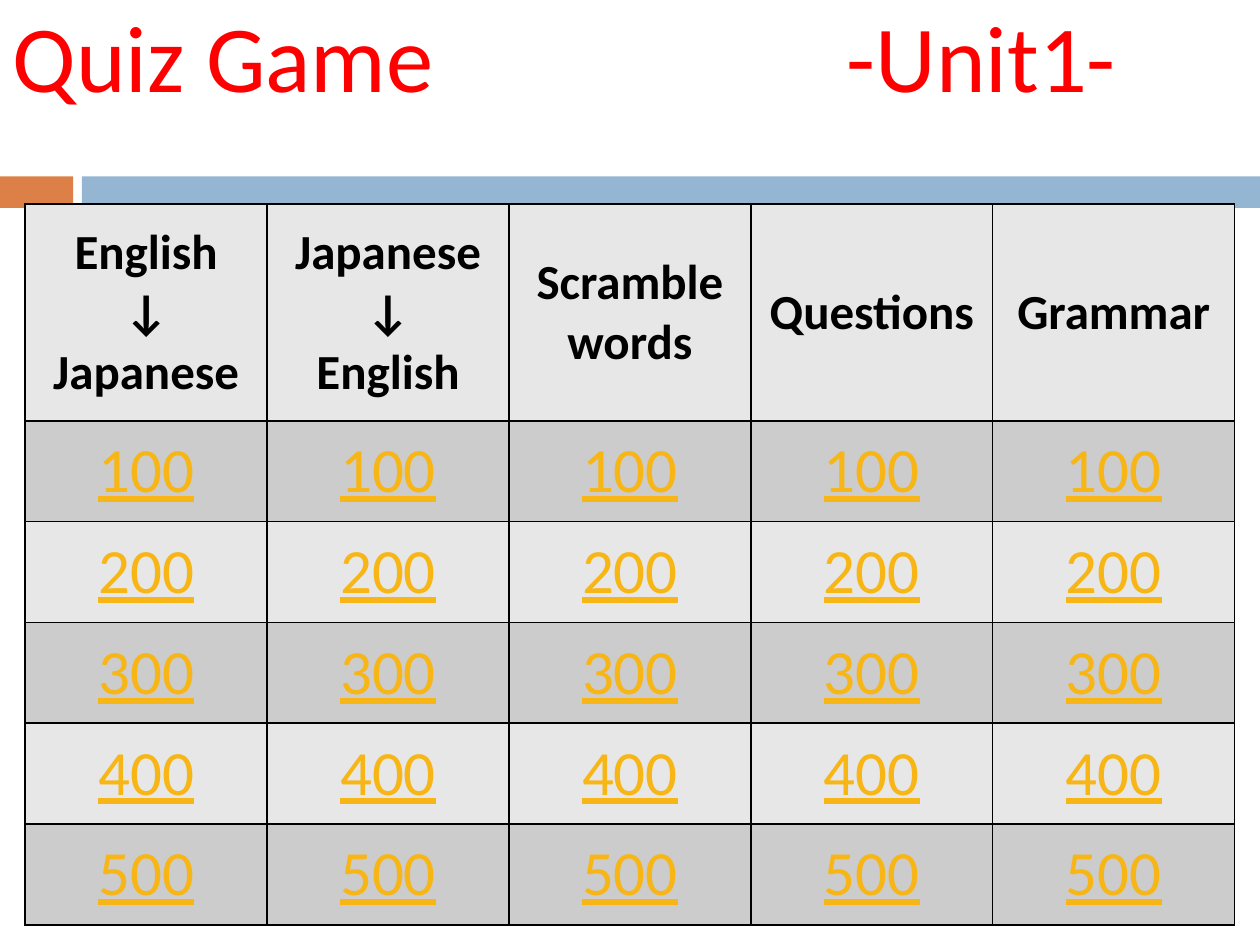
from lxml import etree
from pptx import Presentation
from pptx.dml.color import RGBColor
from pptx.enum.shapes import MSO_SHAPE
from pptx.enum.text import MSO_ANCHOR, MSO_AUTO_SIZE, PP_ALIGN
from pptx.oxml.ns import qn
from pptx.util import Inches, Pt

RECTANGLE = MSO_SHAPE.RECTANGLE
MIDDLE = MSO_ANCHOR.MIDDLE
LEFT, CENTER = PP_ALIGN.LEFT, PP_ALIGN.CENTER
NO_AUTOFIT = MSO_AUTO_SIZE.NONE

BLACK = RGBColor(0x00, 0x00, 0x00)
RED = RGBColor(0xFF, 0x00, 0x00)
GOLD = RGBColor(0xF7, 0xB6, 0x15)
ORANGE = RGBColor(0xDD, 0x80, 0x47)
BLUE = RGBColor(0x94, 0xB6, 0xD2)
LIGHT_GRAY = RGBColor(0xE7, 0xE7, 0xE7)
MID_GRAY = RGBColor(0xCC, 0xCC, 0xCC)

CATEGORIES = ["English\n↓\nJapanese", "Japanese\n↓\nEnglish",
              "Scramble words", "Questions", "Grammar"]
POINTS = [100, 200, 300, 400, 500]
HEADER_HEIGHT, POINTS_HEIGHT = 1.72, 0.8


class QuizSlide:
    """Holds the style and the slide being built."""

    font_name = "Calibri"
    border_width = Pt(1)

    def __init__(self, deck):
        self.slide = deck.slides.add_slide(deck.slide_layouts[5])

    def format_text(self, frame, size, color, align, bold=False, underline=False):
        for para in frame.paragraphs:
            para.alignment = align
            for span in para.runs:
                span.font.name = self.font_name
                span.font.size = Pt(size)
                span.font.color.rgb = color
                span.font.bold = bold
                span.font.underline = underline

    def title(self, text, left, top, width, height, tab):
        box = self.slide.shapes.title
        box.left, box.top = Inches(left), Inches(top)
        box.width, box.height = Inches(width), Inches(height)
        frame = box.text_frame
        frame.text = text
        frame.auto_size = NO_AUTOFIT
        frame.vertical_anchor = MIDDLE
        self.format_text(frame, 54, RED, LEFT)
        # A tab stop sets the gap between the two parts of the title
        properties = frame.paragraphs[0]._p.get_or_add_pPr()
        stops = etree.SubElement(properties, qn("a:tabLst"))
        etree.SubElement(stops, qn("a:tab"), pos=str(Inches(tab)), algn="l")

    def bar(self, left, top, width, height, color):
        bar = self.slide.shapes.add_shape(
            RECTANGLE, Inches(left), Inches(top), Inches(width), Inches(height))
        bar.shadow.inherit = False
        bar.fill.solid()
        bar.fill.fore_color.rgb = color
        bar.line.fill.background()

    def borders(self, cell):
        properties = cell._tc.get_or_add_tcPr()
        for side in ("a:lnL", "a:lnR", "a:lnT", "a:lnB"):
            line = etree.SubElement(properties, qn(side), w=str(self.border_width))
            fill = etree.SubElement(line, qn("a:solidFill"))
            etree.SubElement(fill, qn("a:srgbClr"), val=str(BLACK))

    def cell(self, cell, text, fill, **text_style):
        self.borders(cell)
        cell.fill.solid()
        cell.fill.fore_color.rgb = fill
        cell.vertical_anchor = MIDDLE
        cell.text_frame.text = text
        self.format_text(cell.text_frame, align=CENTER, **text_style)

    def board(self, left, top, width):
        heights = [HEADER_HEIGHT] + [POINTS_HEIGHT] * len(POINTS)
        table = self.slide.shapes.add_table(
            len(heights), len(CATEGORIES), Inches(left), Inches(top),
            Inches(width), Inches(sum(heights))).table
        for row, height in zip(table.rows, heights):
            row.height = Inches(height)
        for column, category in enumerate(CATEGORIES):
            self.cell(table.cell(0, column), category, LIGHT_GRAY,
                      size=28, color=BLACK, bold=True)
            for row, points in enumerate(POINTS, start=1):
                fill = MID_GRAY if row % 2 else LIGHT_GRAY
                self.cell(table.cell(row, column), str(points), fill,
                          size=36, color=GOLD, underline=True)


def main():
    deck = Presentation()
    deck.slide_width, deck.slide_height = Inches(10), Inches(7.5)
    quiz = QuizSlide(deck)

    # Divider bars
    quiz.bar(0, 1.4, 0.58, 0.25, ORANGE)
    quiz.bar(0.65, 1.4, 9.35, 0.25, BLUE)

    # Title
    quiz.title("Quiz Game\t-Unit1-", 0, -0.03, 10, 0.93, tab=6.62)

    # Question board
    quiz.board(0.2, 1.62, 9.6)

    deck.save("out.pptx")


if __name__ == "__main__":
    main()
